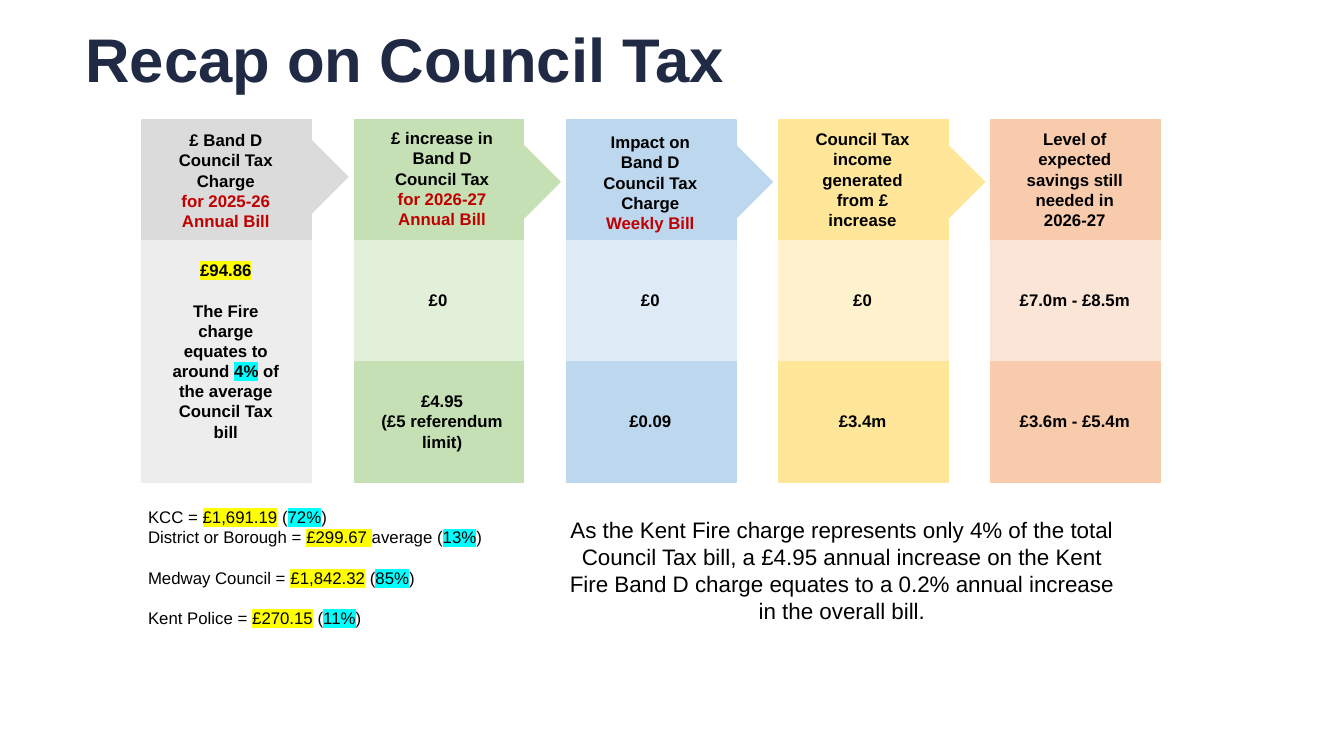
from dataclasses import dataclass

from lxml import etree
from pptx import Presentation
from pptx.dml.color import RGBColor
from pptx.enum.shapes import MSO_SHAPE
from pptx.enum.text import MSO_ANCHOR, MSO_AUTO_SIZE, PP_ALIGN
from pptx.oxml.ns import qn
from pptx.util import Inches, Pt


@dataclass(frozen=True)
class Theme:
    font: str = "Arial"
    title: str = "202A44"
    text: str = "000000"
    accent: str = "C00000"
    amount: str = "FFFF00"
    share: str = "00FFFF"
    title_size: int = 44
    note_size: int = 16
    body_size: int = 12
    line_gap: float = 14.4


@dataclass(frozen=True)
class Run:
    text: str
    color: str = ""
    highlight: str = ""


@dataclass(frozen=True)
class Paragraph:
    runs: tuple[Run, ...]
    spaced: bool = False


@dataclass(frozen=True)
class Entry:
    """Text of one cell, with its box."""
    paragraphs: list[Paragraph]
    top: float
    height: float = 0.3
    inset: float = 0.17
    width: float = 1.32


@dataclass(frozen=True)
class Column:
    dark: str
    light: str
    heading: Entry
    values: tuple[Entry, ...]
    arrow_top: float = 1.45


THEME = Theme()
FIRST_LEFT, LAST_LEFT = 1.41, 9.83
CELL_WIDTH, CELL_HEIGHT, GRID_TOP = 1.68, 1.2, 1.19
ARROW_OFFSET, ARROW_WIDTH, ARROW_HEIGHT = 0.94, 1.1, 0.71


def plain(*lines: str) -> list[Paragraph]:
    return [Paragraph((Run(line),)) for line in lines]


def accented(*lines: str) -> list[Paragraph]:
    return [Paragraph((Run(line, color=THEME.accent),)) for line in lines]


def bill_line(payer: str, amount: str, link: str, share: str, spaced: bool = False) -> Paragraph:
    return Paragraph((Run(payer), Run(amount, highlight=THEME.amount), Run(link),
                      Run(share, highlight=THEME.share), Run(")")), spaced)


# Columns from left to right
FIRE_CHARGE = [
    Paragraph((Run("£94.86", highlight=THEME.amount),)),
    Paragraph((Run("The Fire charge equates to around "), Run("4%", highlight=THEME.share),
               Run(" of the average Council Tax bill")), spaced=True),
]
COLUMNS = [
    Column("DBDBDB", "EDEDED",
           Entry(plain("£ Band D Council Tax", "Charge") + accented("for 2025-26", "Annual Bill"),
                 1.24, 1.11),
           (Entry(FIRE_CHARGE, 2.53, 1.92),), arrow_top=1.4),
    Column("C5E0B4", "E2F0D9",
           Entry(plain("£ increase in Band D Council Tax") + accented("for 2026-27", "Annual Bill"),
                 1.22, 1.11, inset=0.21),
           (Entry(plain("£0"), 2.83),
            Entry(plain("£4.95", "(£5 referendum limit)"), 3.83, 0.71, inset=0.11, width=1.52))),
    Column("BDD7EE", "DEEBF7",
           Entry(plain("Impact on Band D Council Tax Charge") + accented("Weekly Bill"),
                 1.26, 1.11),
           (Entry(plain("£0"), 2.83), Entry(plain("£0.09"), 4.03))),
    Column("FFE699", "FFF2CC",
           Entry(plain("Council Tax income generated from £ increase"), 1.23, 1.11),
           (Entry(plain("£0"), 2.83), Entry(plain("£3.4m"), 4.03))),
    Column("F8CBAD", "FBE5D6",
           Entry(plain("Level of expected savings still needed in 2026-27"), 1.23, 1.11),
           (Entry(plain("£7.0m - £8.5m"), 2.83), Entry(plain("£3.6m - £5.4m"), 4.03))),
]
OTHER_BILLS = [
    bill_line("KCC = ", "£1,691.19", " (", "72%"),
    bill_line("District or Borough = ", "£299.67 ", "average (", "13%"),
    bill_line("Medway Council = ", "£1,842.32", " (", "85%", spaced=True),
    bill_line("Kent Police = ", "£270.15", " (", "11%", spaced=True),
]
CONCLUSION = ("As the Kent Fire charge represents only 4% of the total Council Tax bill, "
              "a £4.95 annual increase on the Kent Fire Band D charge equates to "
              "a 0.2% annual increase in the overall bill.")


def add_block(slide, kind: MSO_SHAPE, left: float, top: float, width: float, height: float,
              color: str) -> None:
    block = slide.shapes.add_shape(kind, Inches(left), Inches(top), Inches(width), Inches(height))
    block.shadow.inherit = False
    block.fill.solid()
    block.fill.fore_color.rgb = RGBColor.from_string(color)
    block.line.color.rgb = RGBColor.from_string(color)
    block.line.width = Pt(1)


def highlight_run(run, color: str) -> None:
    marker = etree.Element(qn("a:highlight"))
    etree.SubElement(marker, qn("a:srgbClr"), val=color)
    run.font.fill._xPr.find(qn("a:solidFill")).addnext(marker)


def add_text(slide, paragraphs: list[Paragraph], left: float, top: float, width: float,
             height: float, *, size: int = THEME.body_size, color: str = THEME.text,
             bold: bool = False, align: PP_ALIGN = PP_ALIGN.CENTER,
             anchor: MSO_ANCHOR = MSO_ANCHOR.TOP, line_spacing: float | None = None,
             grow: bool = True) -> None:
    frame = slide.shapes.add_textbox(Inches(left), Inches(top), Inches(width),
                                     Inches(height)).text_frame
    frame.word_wrap = True
    frame.auto_size = MSO_AUTO_SIZE.SHAPE_TO_FIT_TEXT if grow else MSO_AUTO_SIZE.NONE
    frame.vertical_anchor = anchor
    for index, content in enumerate(paragraphs):
        paragraph = frame.add_paragraph() if index else frame.paragraphs[0]
        paragraph.alignment = align
        if line_spacing:
            paragraph.line_spacing = line_spacing
        if content.spaced:
            paragraph.space_before = Pt(THEME.line_gap)
        for part in content.runs:
            run = paragraph.add_run()
            run.text = part.text
            run.font.name = THEME.font
            run.font.size = Pt(size)
            run.font.bold = bold
            run.font.color.rgb = RGBColor.from_string(part.color or color)
            if part.highlight:
                highlight_run(run, part.highlight)


def add_column(slide, column: Column, left: float, has_arrow: bool) -> None:
    # Arrow behind the heading, pointing to the next column
    if has_arrow:
        add_block(slide, MSO_SHAPE.PENTAGON, left + ARROW_OFFSET, column.arrow_top,
                  ARROW_WIDTH, ARROW_HEIGHT, column.dark)
    add_block(slide, MSO_SHAPE.RECTANGLE, left, GRID_TOP, CELL_WIDTH, CELL_HEIGHT, column.dark)

    # Value cells share the two rows below the heading
    height = 2 * CELL_HEIGHT / len(column.values)
    for row, color in zip(range(len(column.values)), (column.light, column.dark)):
        add_block(slide, MSO_SHAPE.RECTANGLE, left, GRID_TOP + CELL_HEIGHT + row * height,
                  CELL_WIDTH, height, color)
    for entry in (column.heading, *column.values):
        add_text(slide, entry.paragraphs, left + entry.inset, entry.top, entry.width,
                 entry.height, bold=True)


def main() -> None:
    deck = Presentation()
    deck.slide_width, deck.slide_height = Inches(13.33), Inches(7.5)
    slide = deck.slides.add_slide(deck.slide_layouts[6])

    # Title
    add_text(slide, plain("Recap on Council Tax"), 0.75, 0.21, 6.97, 0.82,
             size=THEME.title_size, color=THEME.title, bold=True, align=PP_ALIGN.LEFT,
             anchor=MSO_ANCHOR.MIDDLE, line_spacing=0.9, grow=False)

    # Council tax columns
    last = len(COLUMNS) - 1
    step = (LAST_LEFT - FIRST_LEFT) / last
    for index, column in enumerate(COLUMNS):
        add_column(slide, column, FIRST_LEFT + index * step, has_arrow=index < last)

    # Other bills and conclusion
    add_text(slide, OTHER_BILLS, 1.37, 4.98, 3.77, 1.31, align=PP_ALIGN.LEFT)
    add_text(slide, plain(CONCLUSION), 5.55, 5.07, 5.6, 1.18, size=THEME.note_size)

    deck.save("out.pptx")


if __name__ == "__main__":
    main()
